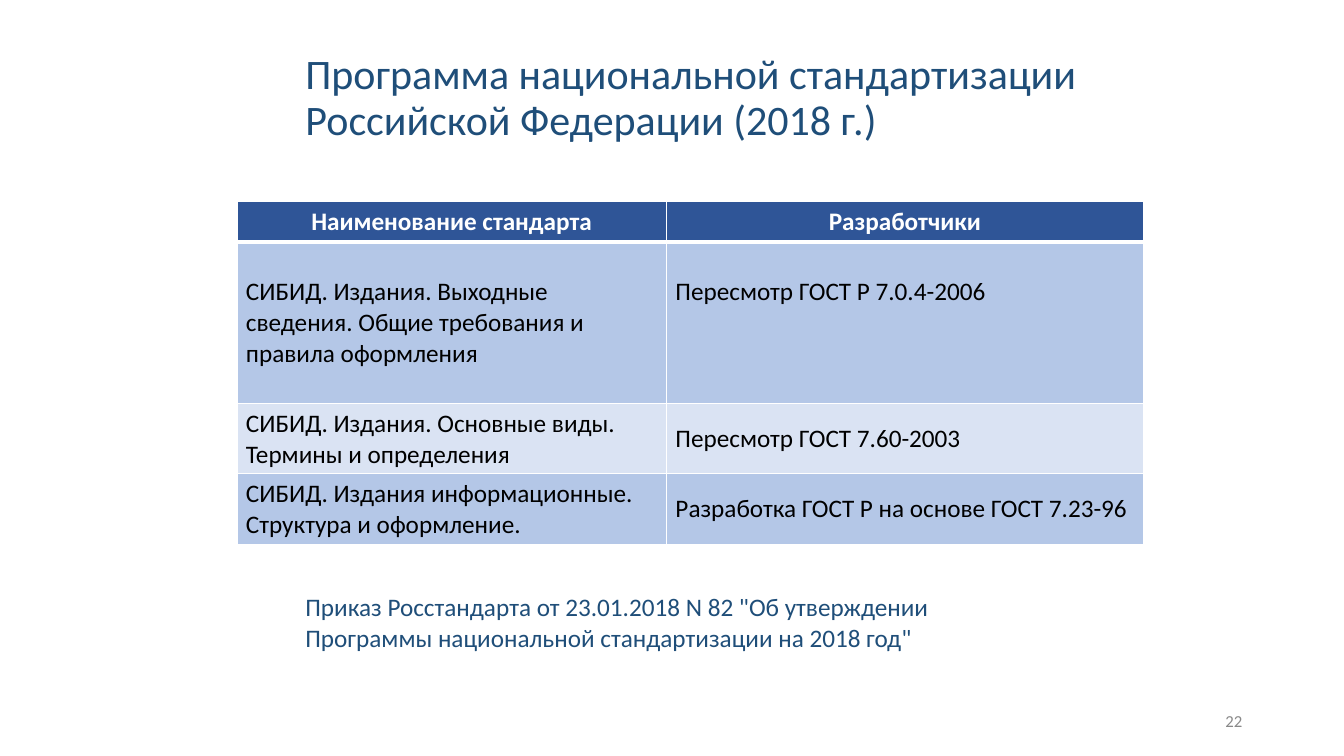
from lxml.etree import SubElement
from pptx import Presentation
from pptx.dml.color import RGBColor
from pptx.enum.text import MSO_ANCHOR as ANCHOR, PP_ALIGN as ALIGN
from pptx.oxml.ns import qn
from pptx.util import Inches, Pt

COLORS = {
    "title": "1F4E79", "header": "2F5597", "odd": "B4C7E7", "even": "DAE3F3",
    "white": "FFFFFF", "black": "000000", "number": "898989",
}


def style(p, size, color, bold=False, align=ALIGN.LEFT):
    p.alignment = align
    for r in p.runs:
        r.font.name = "Calibri"
        r.font.size = Pt(size)
        r.font.bold = bold
        r.font.color.rgb = RGBColor.from_string(COLORS[color])


def add_border(cell, side, width):
    ln = SubElement(cell._tc.get_or_add_tcPr(), qn("a:" + side), w=str(Pt(width)))
    fill = SubElement(ln, qn("a:solidFill"))
    SubElement(fill, qn("a:srgbClr"), val=COLORS["white"])


prs = Presentation()
prs.slide_width, prs.slide_height = Inches(13.33), Inches(7.5)
s = prs.slides.add_slide(prs.slide_layouts[6])

texts = [
    ("Программа национальной стандартизации Российской Федерации (2018 г.)",
     (2.93, 0.4, 7.98, 1.16), 30, "title", ALIGN.LEFT, ANCHOR.MIDDLE, 0.9),
    ('Приказ Росстандарта от 23.01.2018 N 82 "Об утверждении '
     'Программы национальной стандартизации на 2018 год"',
     (2.93, 5.82, 7.38, 0.71), 18, "title", ALIGN.LEFT, ANCHOR.TOP, 1.0),
    ("22", (9.42, 6.95, 3, 0.4), 12, "number", ALIGN.RIGHT, ANCHOR.MIDDLE, 1.0),
]
for text, box, size, color, align, anchor, spacing in texts:
    tf = s.shapes.add_textbox(*map(Inches, box)).text_frame
    tf.word_wrap = True
    tf.vertical_anchor = anchor
    tf.text = text
    p = tf.paragraphs[0]
    p.line_spacing = spacing
    style(p, size, color, align=align)

rows = [
    ("Наименование стандарта", "Разработчики"),
    ("СИБИД. Издания. Выходные сведения. Общие требования и правила оформления",
     "Пересмотр ГОСТ Р 7.0.4-2006"),
    ("СИБИД. Издания. Основные виды. Термины и определения",
     "Пересмотр ГОСТ 7.60-2003"),
    ("СИБИД. Издания информационные. Структура и оформление.",
     "Разработка ГОСТ Р на основе ГОСТ 7.23-96"),
]
widths, heights = (4.26, 4.73), (0.4, 1.6, 0.7, 0.7)
table = s.shapes.add_table(
    len(rows), len(widths), Inches(2.35), Inches(2),
    Inches(sum(widths)), Inches(sum(heights))).table
for column, width in zip(table.columns, widths):
    column.width = Inches(width)

for i, (row, height) in enumerate(zip(rows, heights)):
    table.rows[i].height = Inches(height)
    header = i == 0
    for j, text in enumerate(row):
        cell = table.cell(i, j)
        cell.text = text
        cell.margin_left = cell.margin_right = Inches(0.09)
        cell.margin_top = cell.margin_bottom = Inches(0.05)
        cell.vertical_anchor = ANCHOR.TOP if header else ANCHOR.MIDDLE
        style(cell.text_frame.paragraphs[0], 18, "white" if header else "black",
              header, ALIGN.CENTER if header else ALIGN.LEFT)
        for side in ("lnL", "lnR", "lnT", "lnB"):
            add_border(cell, side, 3 if header and side == "lnB" else 1)
        cell.fill.solid()
        cell.fill.fore_color.rgb = RGBColor.from_string(
            COLORS["header" if header else "odd" if i % 2 else "even"])

revision = table.cell(1, 1)
revision.vertical_anchor = ANCHOR.TOP
revision.margin_top = Inches(0.34)

prs.save("out.pptx")
